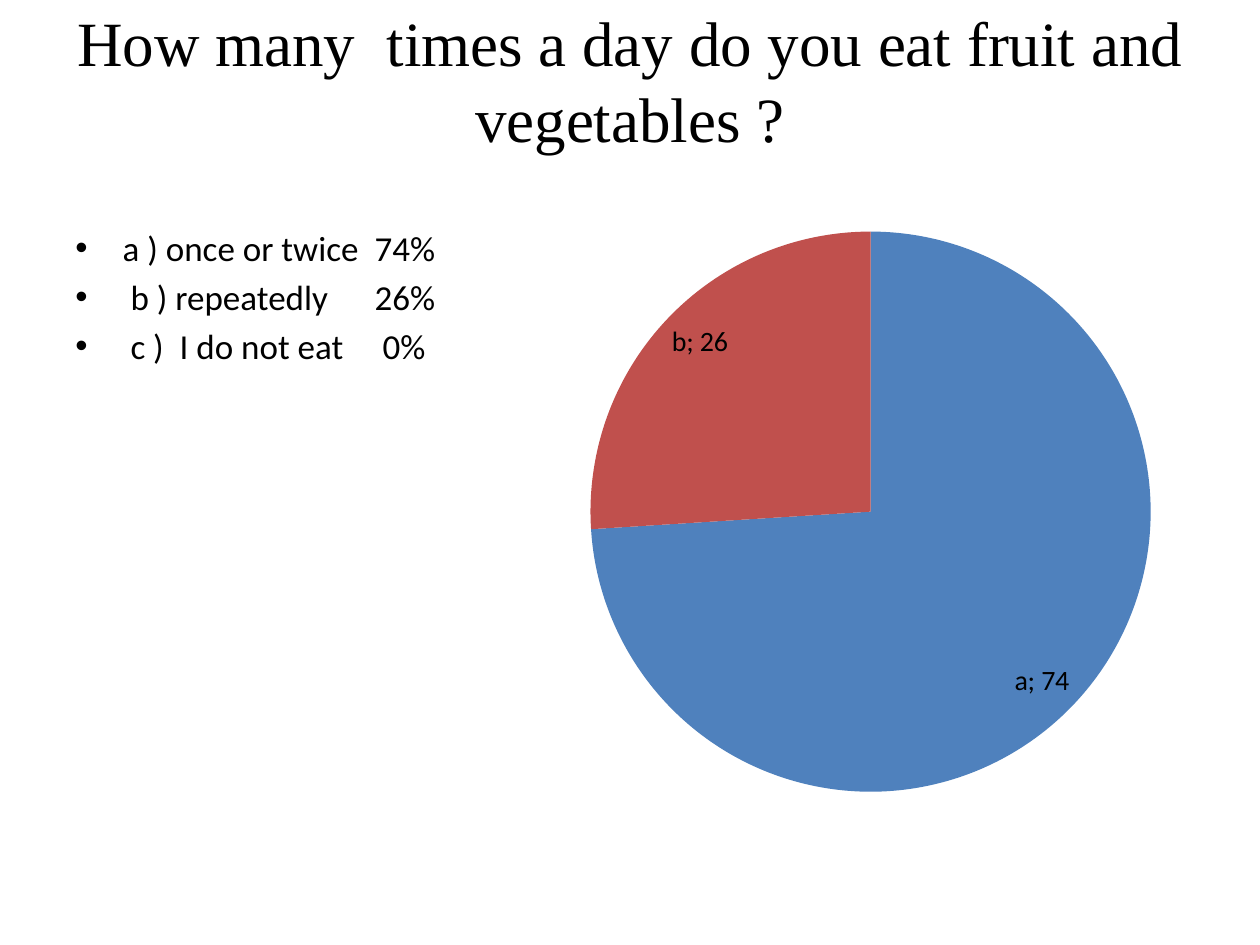
from dataclasses import dataclass

from lxml.etree import SubElement as Sub
from pptx import Presentation as Deck
from pptx.chart.data import CategoryChartData as Data
from pptx.dml.color import RGBColor as Rgb
from pptx.enum.chart import XL_CHART_TYPE as Kind, XL_LABEL_POSITION as Spot
from pptx.enum.text import MSO_ANCHOR as Anchor, PP_ALIGN as Align
from pptx.oxml.ns import qn
from pptx.util import Pt


@dataclass(frozen=True)
class Theme:
    ink: str = "000000"
    hues: tuple = ("4F81BD", "C0504D", "9BBB59")
    serif: str = "Times New Roman"
    sans: str = "Calibri"
    head: int = 36
    body: int = 20
    label: int = 16


def style(font, face, size, color):
    font.name, font.size = face, Pt(size)
    font.color.rgb = Rgb.from_string(color)


def write(para, text, face, size, color, align=Align.LEFT, lead=None, before=0):
    para.alignment = align
    para.space_before = Pt(before)
    if lead:
        para.line_spacing = Pt(lead)
    run = para.add_run()
    run.text = text
    style(run.font, face, size, color)


class Page:
    def __init__(self, deck, theme):
        self.slide = deck.slides.add_slide(deck.slide_layouts[6])
        self.theme = theme

    def frame(self, box):
        frame = self.slide.shapes.add_textbox(*map(Pt, box)).text_frame
        frame.word_wrap = True
        return frame

    def title(self, text, box, foot):
        frame = self.frame(box)
        frame.vertical_anchor = Anchor.MIDDLE
        frame.margin_bottom = Pt(foot)
        t = self.theme
        write(frame.paragraphs[0], text, t.serif, t.head, t.ink,
              align=Align.CENTER, lead=43.5)

    def bullets(self, rows, box, indent, stop):
        frame = self.frame(box)
        t = self.theme
        for i, row in enumerate(rows):
            para = frame.add_paragraph() if i else frame.paragraphs[0]
            write(para, "\t".join(row), t.sans, t.body, t.ink, before=4)
            props = para._p.get_or_add_pPr()
            props.set("marL", str(Pt(indent)))
            props.set("indent", str(-Pt(indent)))
            Sub(props, qn("a:buFont"), typeface="Arial")
            Sub(props, qn("a:buChar"), char="•")
            tabs = Sub(props, qn("a:tabLst"))
            Sub(tabs, qn("a:tab"), pos=str(Pt(stop)), algn="l")

    def pie(self, name, parts, box):
        data = Data(number_format="0")
        data.categories = list(parts)
        data.add_series(name, parts.values())
        chart = self.slide.shapes.add_chart(
            Kind.PIE, *map(Pt, box), data).chart
        chart.has_legend = chart.has_title = False
        t = self.theme
        style(chart.font, t.sans, t.label, t.ink)
        plot = chart.plots[0]
        plot.vary_by_categories = True
        for i, hue in enumerate(t.hues):
            fill = plot.series[0].points[i].format.fill
            fill.solid()
            fill.fore_color.rgb = Rgb.from_string(hue)
        plot.has_data_labels = True
        tags = plot.data_labels
        style(tags.font, t.sans, t.label, t.ink)
        tags.show_value = tags.show_category_name = True
        tags.show_percentage = False
        tags.number_format, tags.number_format_is_linked = "0;;", False
        tags.position = Spot.INSIDE_END


def main():
    deck = Deck()
    deck.slide_width, deck.slide_height = Pt(720), Pt(540)
    page = Page(deck, Theme())
    page.title("How many  times a day do you eat fruit and vegetables ?",
               (36, 21.6, 648, 90), foot=46)
    page.pie("Series 1", {"a": 74, "b": 26, "c": 0}, (326, 122.4, 343, 340))
    page.bullets([("a ) once or twice", "74%"),
                  (" b ) repeatedly", "26%"),
                  (" c )  I do not eat", " 0%")],
                 (36, 126, 648, 356.4), indent=27, stop=171)
    deck.save("out.pptx")


if __name__ == "__main__":
    main()
